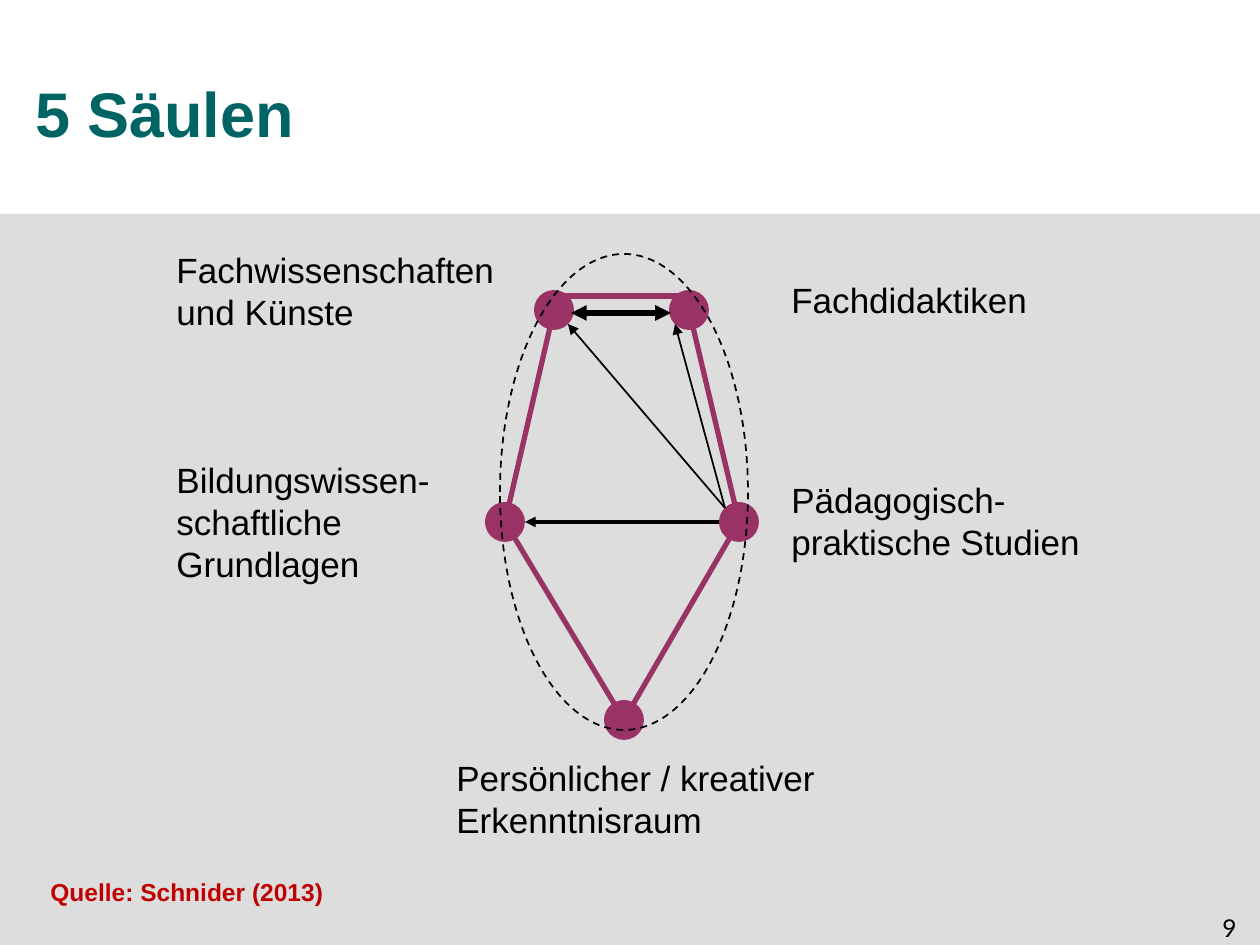
from dataclasses import dataclass

from lxml.etree import SubElement
from pptx import Presentation
from pptx.dml.color import RGBColor
from pptx.enum.dml import MSO_LINE
from pptx.enum.shapes import MSO_CONNECTOR, MSO_SHAPE
from pptx.enum.text import MSO_ANCHOR, PP_ALIGN
from pptx.oxml.ns import qn
from pptx.util import Pt


@dataclass(frozen=True)
class Theme:
    panel: str = "DDDDDD"
    title: str = "006464"
    ink: str = "000000"
    source: str = "C00000"
    pillar: str = "993366"
    font: str = "Arial"
    number_font: str = "Lato"
    title_size: int = 36
    label_size: int = 20
    small_size: int = 14


THEME = Theme()
EMU_PER_PX = 914400 / 126
NODE_SIZE = 40

LABELS = [
    ("Fachwissenschaften und Künste", 164, 242, 347, 97),
    ("Fachdidaktiken", 779, 272, 338, 55),
    ("Bildungswissen-schaftliche Grundlagen", 164, 452, 294, 140),
    ("Pädagogisch-praktische Studien", 779, 472, 338, 97),
    ("Persönlicher / kreativer Erkenntnisraum", 444, 750, 384, 97),
]

DIDACTICS, SUBJECTS = (689, 310), (554, 310)
EDUCATION, PRACTICE = (505, 522), (739, 522)
PERSONAL = (624, 720)
NODES = [DIDACTICS, SUBJECTS, EDUCATION, PRACTICE, PERSONAL]

EDGES = [
    ((559, 296), (685, 296)),
    (PRACTICE, DIDACTICS),
    (PERSONAL, PRACTICE),
    (PERSONAL, EDUCATION),
    (EDUCATION, SUBJECTS),
]

ARROWS = [
    ((571, 313), (671, 313), 3, ("headEnd", "tailEnd")),
    ((525, 522), (719, 522), 2, ("headEnd",)),
    ((675, 324), (725, 508), 1, ("headEnd",)),
    ((568, 324), (725, 508), 1, ("headEnd",)),
]


def emu(*lengths):
    return [round(length * EMU_PER_PX) for length in lengths]


def color(value):
    return RGBColor.from_string(value)


def add_text(page, text, place, size, ink=THEME.ink, font=THEME.font, bold=False):
    box = page.shapes.add_textbox(*emu(*place))
    frame = box.text_frame
    frame.word_wrap = True
    span = frame.paragraphs[0].add_run()
    span.text = text
    span.font.name = font
    span.font.size = Pt(size)
    span.font.bold = bold
    span.font.color.rgb = color(ink)
    return frame


def add_title(page, text):
    frame = add_text(page, text, (35, 25, 1191, 174), THEME.title_size,
                     THEME.title, bold=True)
    frame.vertical_anchor = MSO_ANCHOR.MIDDLE
    frame.margin_left = frame.margin_right = 0
    frame.margin_top = frame.margin_bottom = 0


def add_filled(shapes, kind, place, fill):
    shape = shapes.add_shape(kind, *emu(*place))
    shape.shadow.inherit = False
    shape.fill.solid()
    shape.fill.fore_color.rgb = color(fill)
    shape.line.fill.background()


def add_node(shapes, center):
    x, y = center
    half = NODE_SIZE // 2
    place = (x - half, y - half, NODE_SIZE, NODE_SIZE)
    add_filled(shapes, MSO_SHAPE.OVAL, place, THEME.pillar)


def add_line(shapes, start, end, ink, width, ends=()):
    line = shapes.add_connector(MSO_CONNECTOR.STRAIGHT, *emu(*start, *end))
    line.line.color.rgb = color(ink)
    line.line.width = Pt(width)
    outline = line.line._get_or_add_ln()
    for tag in ends:
        SubElement(outline, qn(f"a:{tag}"), type="triangle")
    SubElement(line._element.spPr, qn("a:effectLst"))


def add_dashed_oval(shapes, place):
    oval = shapes.add_shape(MSO_SHAPE.OVAL, *emu(*place))
    oval.shadow.inherit = False
    oval.fill.background()
    oval.line.color.rgb = color(THEME.ink)
    oval.line.width = Pt(1)
    oval.line.dash_style = MSO_LINE.DASH


def add_diagram(page):
    shapes = page.shapes.add_group_shape().shapes
    for center in NODES:
        add_node(shapes, center)
    for start, end, width, ends in ARROWS:
        add_line(shapes, start, end, THEME.ink, width, ends)
    for start, end in EDGES:
        add_line(shapes, start, end, THEME.pillar, 3)
    add_dashed_oval(shapes, (500, 254, 248, 476))


def main():
    deck = Presentation()
    deck.slide_width, deck.slide_height = emu(1260, 945)
    page = deck.slides.add_slide(deck.slide_layouts[6])
    add_filled(page.shapes, MSO_SHAPE.RECTANGLE, (0, 214, 1260, 731), THEME.panel)
    number = add_text(page, "9", (987, 907, 262, 42), THEME.small_size,
                      font=THEME.number_font)
    number.paragraphs[0].alignment = PP_ALIGN.RIGHT
    add_title(page, "5 Säulen")
    for text, *place in LABELS:
        add_text(page, text, place, THEME.label_size)
    add_text(page, "Quelle: Schnider (2013)", (38, 871, 1169, 43),
             THEME.small_size, THEME.source, bold=True)
    add_diagram(page)
    deck.save("out.pptx")


if __name__ == "__main__":
    main()
